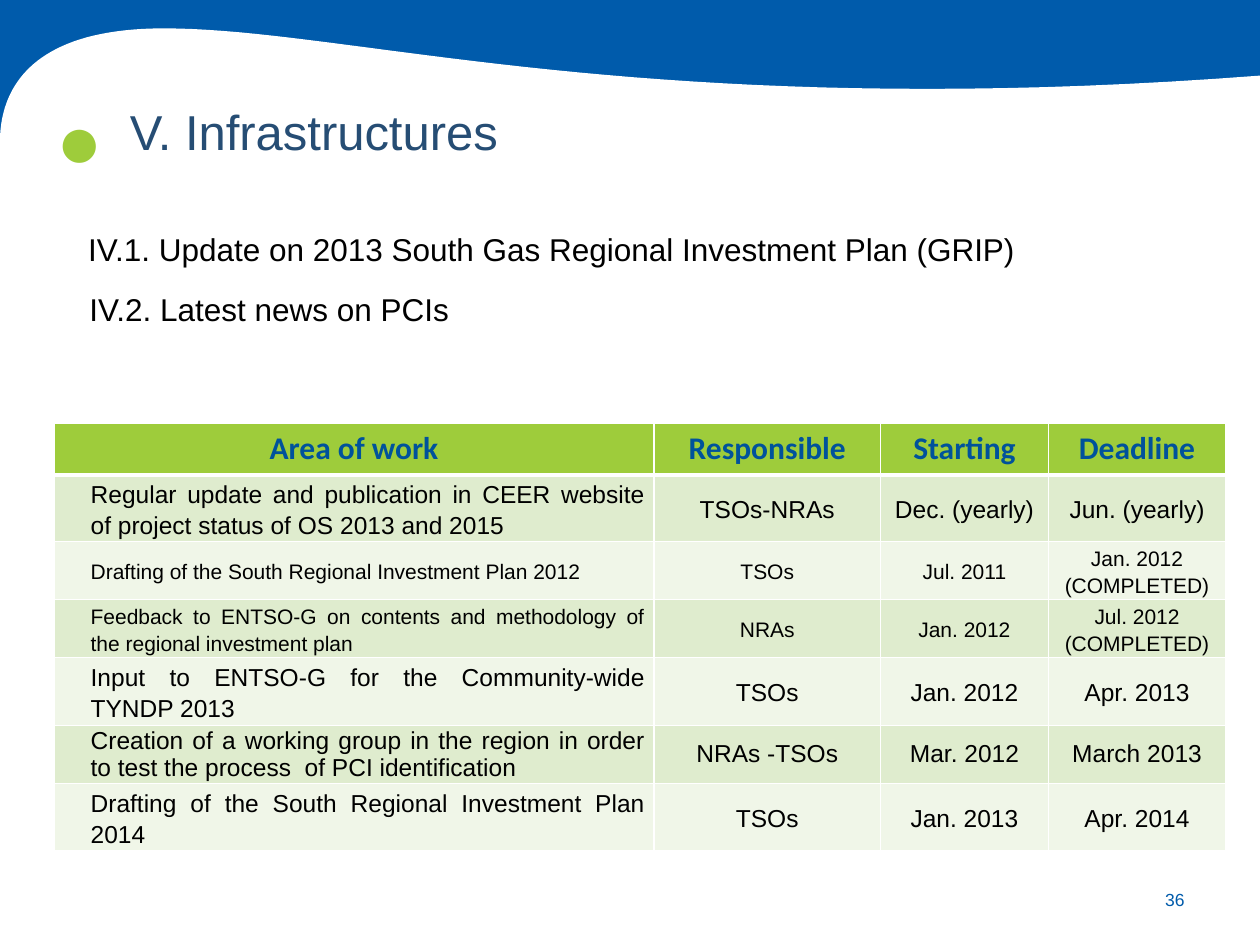
from lxml.etree import SubElement
from pptx import Presentation
from pptx.dml.color import RGBColor
from pptx.enum.shapes import MSO_SHAPE
from pptx.enum.text import MSO_ANCHOR as ANCHOR, PP_ALIGN as ALIGN
from pptx.oxml import parse_xml
from pptx.oxml.ns import nsdecls, qn
from pptx.util import Inches, Pt

BLUE = RGBColor(0x00, 0x5B, 0xAB)
HEADING = RGBColor(0x00, 0x52, 0x9B)
NAVY = RGBColor(0x26, 0x4D, 0x74)
GREEN = RGBColor(0x9E, 0xCC, 0x3B)
BANDS = RGBColor(0xDF, 0xEC, 0xCE), RGBColor(0xF0, 0xF6, 0xE8)
WHITE = RGBColor(0xFF, 0xFF, 0xFF)
BLACK = RGBColor(0x00, 0x00, 0x00)

W, H = Inches(10), Inches(7.5)
COL, ROW = W / 100, H / 100

HEADERS = ["Area of work", "Responsible", "Starting", "Deadline"]
COLUMN_SHARES = [4.76, 1.8, 1.33, 1.41]
ROW_SHARES = [0.41, 0.53, 0.46, 0.46, 0.54, 0.46, 0.54]
TASKS = [
    (14, 1.15, ["Regular update and publication in CEER website of project status of OS 2013 and 2015",
                "TSOs-NRAs", "Dec. (yearly)", "Jun. (yearly)"]),
    (12, 1.15, ["Drafting of the South Regional Investment Plan 2012",
                "TSOs", "Jul. 2011", "Jan. 2012 (COMPLETED)"]),
    (12, 1.15, ["Feedback to ENTSO-G on contents and methodology of the regional investment plan",
                "NRAs", "Jan. 2012", "Jul. 2012 (COMPLETED)"]),
    (14, 1.15, ["Input to ENTSO-G for the Community-wide TYNDP 2013",
                "TSOs", "Jan. 2012", "Apr. 2013"]),
    (14, 1.0, ["Creation of a working group in the region in order to test the process  of PCI identification",
               "NRAs -TSOs", "Mar. 2012", "March 2013"]),
    (14, 1.15, ["Drafting of the South Regional Investment Plan 2014",
                "TSOs", "Jan. 2013", "Apr. 2014"]),
]


def grid(left, top, width, height):
    """Turn columns and rows of the slide grid into lengths."""
    return [int(v) for v in (left * COL, top * ROW, width * COL, height * ROW)]


def assign(obj, **values):
    """Set each named attribute of an object."""
    for name, value in values.items():
        setattr(obj, name, value)


def write(p, text, size, color, font="Arial", bold=False, indent=None, **layout):
    """Write one formatted run into a paragraph."""
    if indent:
        pPr = p._p.get_or_add_pPr()
        for name, value in zip(("marL", "indent"), indent):
            pPr.set(name, str(Inches(value)))
        SubElement(pPr, qn("a:buNone"))
    assign(p, **layout)
    r = p.add_run()
    r.text = text
    assign(r.font, name=font, size=Pt(size), bold=bold)
    r.font.color.rgb = color


def paint(sp, color):
    """Give a shape a flat fill without line or shadow."""
    sp.shadow.inherit = False
    sp.fill.solid()
    sp.fill.fore_color.rgb = color
    sp.line.fill.background()


def bezier(a, b, c, d, steps=40):
    """Sample a cubic curve after its start point."""
    for i in range(1, steps + 1):
        t = i / steps
        u = 1 - t
        yield tuple(u**3 * e + 3 * u * u * t * f + 3 * u * t * t * g + t**3 * h
                    for e, f, g, h in zip(a, b, c, d))


def add_wave(s, box):
    """Draw the blue band and the white page that cuts a wave from it."""
    x, y, w, h = box
    paint(s.shapes.add_shape(MSO_SHAPE.RECTANGLE, x, y, w, int(h * 0.15)), BLUE)
    start, crest, end = (0, 0.15), (0.13, 0.03), (1, 0.08)
    points = [*bezier(start, (0, 0.1), (0.02, 0.03), crest),
              *bezier(crest, (0.28, 0.03), (0.51, 0.13), end), (1, 1), (0, 1)]
    page = s.shapes.build_freeform(x, int(y + start[1] * h))
    page.add_line_segments([(int(x + px * w), int(y + py * h)) for px, py in points])
    paint(page.convert_to_shape(), WHITE)


def fill_placeholder(s, sp, box):
    """Bring a placeholder to the front of its box and return its text frame."""
    s.shapes.element.append(sp.element)
    assign(sp, **dict(zip(("left", "top", "width", "height"), box)))
    tf = sp.text_frame
    assign(tf, word_wrap=True, vertical_anchor=ANCHOR.TOP)
    return tf


def add_title(s, box):
    """Place the slide title."""
    tf = fill_placeholder(s, s.shapes.title, box)
    write(tf.paragraphs[0], "V. Infrastructures", 28, NAVY, indent=(0.09, 0.01),
          alignment=ALIGN.JUSTIFY, space_before=Pt(0))


def add_topics(s, box):
    """Place the list of topics."""
    tf = fill_placeholder(s, s.placeholders[1], box)
    write(tf.paragraphs[0], "IV.1. Update on 2013 South Gas Regional Investment Plan (GRIP)",
          18, BLACK, indent=(0.5, -0.41), space_before=Pt(0), space_after=Pt(2))
    write(tf.add_paragraph(), "IV.2. Latest news on PCIs", 18, BLACK, indent=(0.39, -0.29),
          line_spacing=1.2, space_before=Pt(6), space_after=Pt(2))


def add_label(s, box, text, size, color, anchor, align):
    """Place a one-line text box."""
    tf = s.shapes.add_textbox(*box).text_frame
    assign(tf, word_wrap=True, vertical_anchor=anchor)
    write(tf.paragraphs[0], text, size, color, alignment=align)


def format_cell(cell, fill, top, bottom):
    """Fill a cell and rule its edges in white."""
    cell.fill.solid()
    cell.fill.fore_color.rgb = fill
    tcPr = cell._tc.get_or_add_tcPr()
    for i, (side, width) in enumerate(zip("LRTB", (1, 1, top, bottom))):
        tcPr.insert(i, parse_xml(
            f'<a:ln{side} {nsdecls("a")} w="{Pt(width)}"><a:solidFill>'
            f'<a:srgbClr val="{WHITE}"/></a:solidFill></a:ln{side}>'))


def add_schedule(s, box):
    """Place the table of work areas and dates."""
    table = s.shapes.add_table(len(TASKS) + 1, len(HEADERS), *box).table
    for col, share in zip(table.columns, COLUMN_SHARES):
        col.width = int(box[2] * share / sum(COLUMN_SHARES))
    for row, share in zip(table.rows, ROW_SHARES):
        row.height = int(box[3] * share / sum(ROW_SHARES))
    for c, text in enumerate(HEADERS):
        cell = table.cell(0, c)
        format_cell(cell, GREEN, 1, 3)
        write(cell.text_frame.paragraphs[0], text, 18, HEADING, "Calibri", True,
              alignment=ALIGN.CENTER)
    for r, (size, spacing, texts) in enumerate(TASKS, 1):
        for c, text in enumerate(texts):
            cell = table.cell(r, c)
            format_cell(cell, BANDS[(r - 1) % 2], 3 if r == 1 else 1, 1)
            assign(cell, vertical_anchor=ANCHOR.MIDDLE, margin_top=0, margin_bottom=0,
                   margin_left=Inches(0.07), margin_right=Inches(0.07))
            write(cell.text_frame.paragraphs[0], text, size, BLACK,
                  indent=None if c else (0.22, 0), line_spacing=spacing,
                  alignment=ALIGN.CENTER if c else ALIGN.JUSTIFY)


def main():
    """Build and save the slide."""
    prs = Presentation()
    assign(prs, slide_width=W, slide_height=H)
    s = prs.slides.add_slide(prs.slide_layouts[1])
    add_wave(s, grid(0, 0, 100, 100))
    add_label(s, grid(89.4, 92.5, 5.6, 5.3), "36", 10, BLUE, ANCHOR.MIDDLE, ALIGN.RIGHT)
    add_label(s, grid(3.5, 7.6, 5.5, 12.5), "●", 44, GREEN, ANCHOR.BOTTOM, ALIGN.CENTER)
    add_title(s, grid(8.3, 10.1, 87.5, 7.6))
    add_schedule(s, grid(4.3, 44.8, 93, 45.3))
    add_topics(s, grid(5.1, 23.7, 85.5, 11.3))
    prs.save("out.pptx")


if __name__ == "__main__":
    main()
